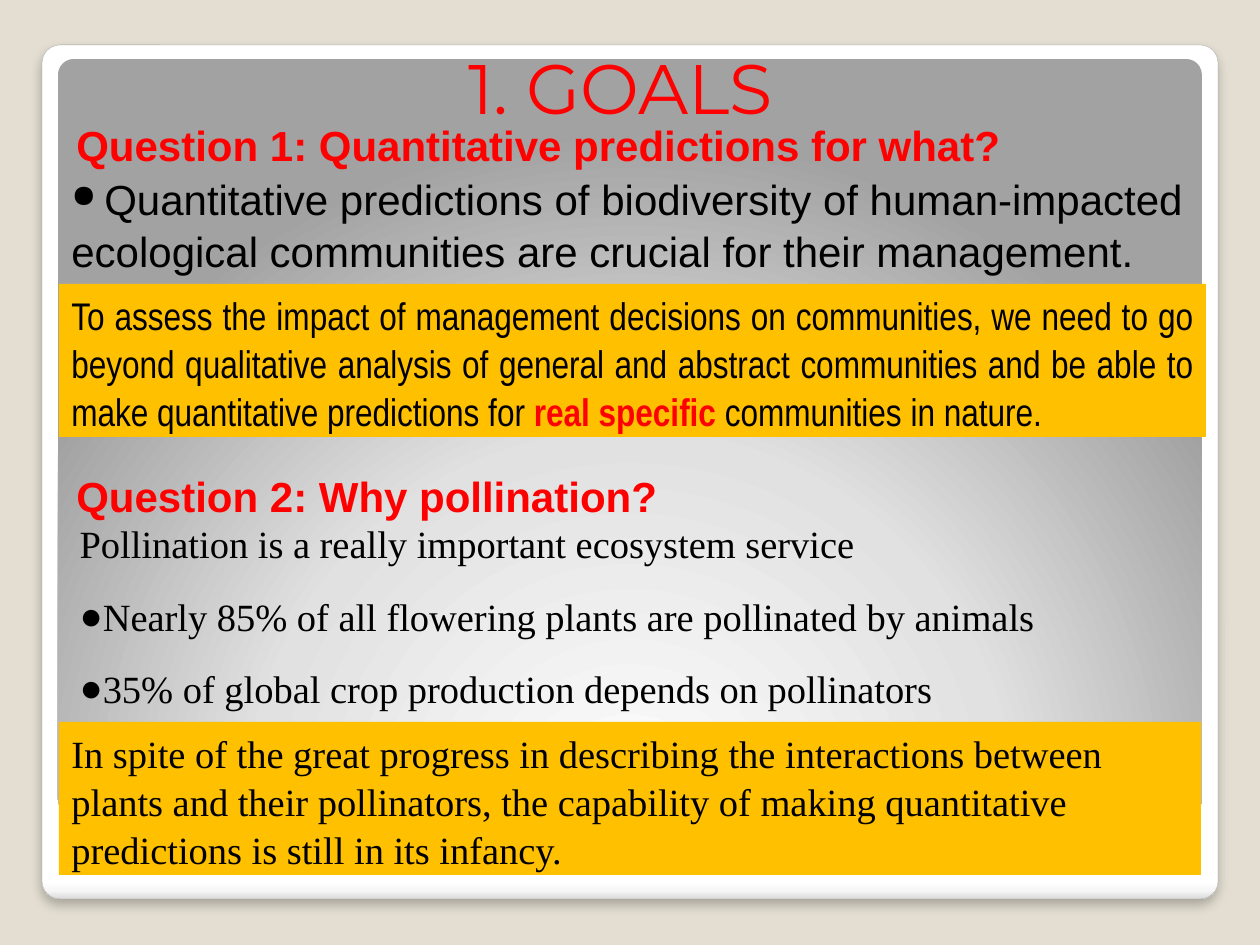
"""Build the goals slide on pollination and quantitative predictions."""
import dataclasses

import pptx
import pptx.dml.color
import pptx.enum.shapes
import pptx.enum.text
import pptx.oxml
import pptx.oxml.ns
import pptx.util


@dataclasses.dataclass
class Theme:
    back: str = "E3DED1"
    edge: str = "A4A4A4"
    gold: str = "FFC000"
    red: str = "FF0000"
    ink: str = "000000"
    title: int = 40
    head: int = 24
    body: int = 22
    lead: int = 18
    sans: str = "Arial"
    slim: str = "Arial Narrow"
    serif: str = "Times New Roman"
    show: str = "Montserrat"


theme = Theme()
PX = 914400 / 126
RGB = pptx.dml.color.RGBColor.from_string
ALIGN = pptx.enum.text.PP_ALIGN
KIND = pptx.enum.shapes.MSO_SHAPE
qn = pptx.oxml.ns.qn
NS = pptx.oxml.ns.nsdecls("a")


def write(frame, text, size=theme.body, font=theme.serif, color=theme.ink,
          bold=False, align=ALIGN.LEFT, gap=0, line=1.04, dot=None, more=False):
    """Add one paragraph, or with more=True one run to the last paragraph."""
    if more:
        para = frame.paragraphs[-1]
    else:
        para = frame.add_paragraph() if frame.text else frame.paragraphs[0]
        para.alignment = align
        para.line_spacing = line
        para.space_before = pptx.util.Pt(gap)
        prop = para._p.get_or_add_pPr()
        prop.set("marL", "0")
        prop.set("indent", "0")
        mark = f'<a:buChar {NS} char="{dot}"/>' if dot else f"<a:buNone {NS}/>"
        prop.append(pptx.oxml.parse_xml(mark))
    run = para.add_run()
    run.text = text
    run.font.size = pptx.util.Pt(size)
    run.font.name = font
    run.font.bold = bold
    run.font.color.rgb = RGB(color)


def grade(shape, stops, tail):
    """Fill a shape with gradient stops, given in percent."""
    marks = "".join(f'<a:gs pos="{pos * 1000}"><a:srgbClr val="{color}"/></a:gs>'
                    for pos, color in stops)
    shape.fill.gradient()
    prop = shape.element.spPr
    prop.replace(prop.find(qn("a:gradFill")), pptx.oxml.parse_xml(
        f'<a:gradFill {NS} rotWithShape="1"><a:gsLst>{marks}</a:gsLst>{tail}</a:gradFill>'))


deck = pptx.Presentation()
deck.slide_width = round(1260 * PX)
deck.slide_height = round(945 * PX)
slide = deck.slides.add_slide(deck.slide_layouts[1])
slide.background.fill.solid()
slide.background.fill.fore_color.rgb = RGB(theme.back)
title, body = slide.placeholders

# panels
panels = []
for spot in [(42, 45, 1176, 854), (58, 59, 1144, 756)]:
    panel = slide.shapes.add_shape(KIND.ROUNDED_RECTANGLE, *[round(n * PX) for n in spot])
    panel.adjustments[0] = 0.021
    panel.shadow.inherit = False
    panel.line.fill.background()
    panels.append(panel)
frame, glow = panels
grade(frame, [(0, "FFFFFF"), (98, "FFFFFF"), (99, "F7F7F7"), (100, "DADADA")],
      '<a:lin ang="5400000" scaled="0"/>')
grade(glow, [(0, "FFFFFF"), (55, "E1E1E1"), (100, "A2A2A2")],
      '<a:path path="circle"><a:fillToRect l="50000" t="175000" r="50000" b="-75000"/></a:path>')
frame.line.color.rgb = RGB(theme.edge)
frame.line.width = pptx.util.Pt(0.16)
frame.element.spPr.find(qn("a:effectLst")).append(pptx.oxml.parse_xml(
    f'<a:outerShdw {NS} blurRad="76200" dist="50800" dir="5400000" algn="t" rotWithShape="0">'
    f'<a:srgbClr val="{theme.ink}"><a:alpha val="25000"/></a:srgbClr></a:outerShdw>'))

tree = slide.shapes.element
for item, spot in [(body, (67, 512, 1091, 204)), (title, (64, 45, 1131, 90))]:
    item.left, item.top, item.width, item.height = [round(n * PX) for n in spot]
    item.text_frame.auto_size = pptx.enum.text.MSO_AUTO_SIZE.NONE
    tree.append(item.element)
title.text_frame.vertical_anchor = pptx.enum.text.MSO_ANCHOR.BOTTOM
write(title.text_frame, "1. GOALS ", size=theme.title, font=theme.show,
      color=theme.red, align=ALIGN.CENTER, line=1.0)

write(body.text_frame, "Pollination is a really important ecosystem service")
for fact in ["Nearly 85% of all flowering plants are pollinated by animals",
             "35% of global crop production depends on pollinators"]:
    write(body.text_frame, fact, gap=14, dot="●")

texts = []
for spot in [(59, 165, 1181, 115), (64, 111, 1095, 63), (64, 462, 1095, 63)]:
    box = slide.shapes.add_textbox(*[round(n * PX) for n in spot])
    box.text_frame.word_wrap = True
    texts.append(box.text_frame)
claim, *heads = texts
write(claim, " ", size=theme.lead, dot="●")
write(claim, "Quantitative predictions of biodiversity of human-impacted ecological "
      "communities are crucial for their management.",
      size=theme.head, font=theme.sans, more=True)
for head, text in zip(heads, ["Question 1: Quantitative predictions for what?",
                              "Question 2: Why pollination?"]):
    write(head, text, size=theme.head, font=theme.sans, color=theme.red, bold=True)

bands = []
for spot in [(59, 284, 1147, 153), (59, 722, 1142, 153)]:
    band = slide.shapes.add_shape(KIND.RECTANGLE, *[round(n * PX) for n in spot])
    band.shadow.inherit = False
    band.fill.solid()
    band.fill.fore_color.rgb = RGB(theme.gold)
    band.line.fill.background()
    band.text_frame.word_wrap = True
    band.text_frame.vertical_anchor = pptx.enum.text.MSO_ANCHOR.TOP
    bands.append(band.text_frame)
need, state = bands
write(need, "To assess the impact of management decisions on communities, we need to go "
      "beyond qualitative analysis of general and abstract communities and be able to "
      "make quantitative predictions for ", font=theme.slim, align=ALIGN.JUSTIFY)
write(need, "real specific", font=theme.slim, color=theme.red, bold=True, more=True)
write(need, " communities in nature.", font=theme.slim, more=True)
write(state, "In spite of the great progress in describing the interactions between plants "
      "and their pollinators, the capability of making quantitative predictions is still "
      "in its infancy.")

deck.save("out.pptx")
